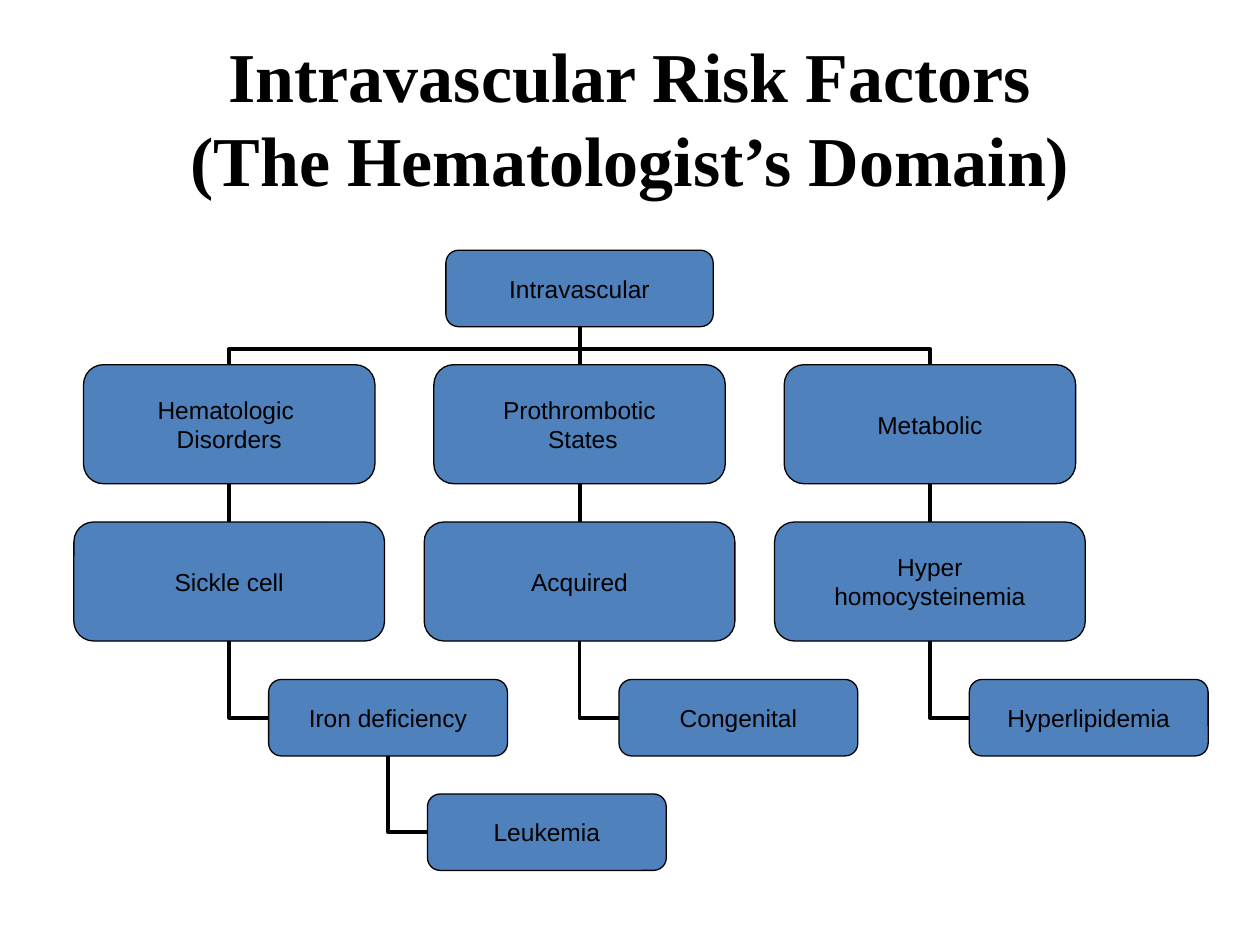
from lxml import etree
from pptx import Presentation
from pptx import util as u
from pptx.dml.color import RGBColor
from pptx.enum import shapes, text
from pptx.oxml.ns import qn

CENTERS = [131, 331.2, 531.4]
GROUPS = [
    ("Hematologic \nDisorders", "Sickle cell", ["Iron deficiency", "Leukemia"]),
    ("Prothrombotic\n States", "Acquired", ["Congenital"]),
    ("Metabolic", "Hyper\nhomocysteinemia", ["Hyperlipidemia"]),
]
ROOT_TOP, GROUP_TOP, FIRST_TOP, LEAF_TOP = 143, 208.4, 298.3, 388.3
SMALL, LARGE = 43.7, 68
ROOT_WIDTH, GROUP_WIDTH, FIRST_WIDTH, LEAF_WIDTH = 152.8, 166.5, 177.5, 136.5
LEAF_INDENT, LEAF_STEP = 22.5, 65.4
BUS_Y = 199.4


def color(value):
    """Return the colour for a hex string."""
    return RGBColor.from_string(value)


def write_text(frame, content, size=14, font="Arial", bold=False, wrap=False):
    """Fill a text frame with centred paragraphs, one for each line."""
    frame.word_wrap = wrap
    frame.vertical_anchor = text.MSO_ANCHOR.MIDDLE
    for index, line in enumerate(content.split("\n")):
        paragraph = frame.add_paragraph() if index else frame.paragraphs[0]
        paragraph.text = line
        paragraph.alignment = text.PP_ALIGN.CENTER
        for run in paragraph.runs:
            run.font.size = u.Pt(size)
            run.font.name = font
            run.font.bold = bold
            run.font.color.rgb = color("000000")


def add_title(slide, content):
    """Add the slide title."""
    box = slide.shapes.add_textbox(u.Pt(36), u.Pt(21.6), u.Pt(648), u.Pt(90))
    write_text(box.text_frame, content, size=40, font="Times New Roman", bold=True, wrap=True)


def add_box(slide, content, center, top, width, height):
    """Add a rounded box centred on a horizontal position."""
    shape = slide.shapes.add_shape(
        shapes.MSO_SHAPE.ROUNDED_RECTANGLE,
        u.Pt(center - width / 2), u.Pt(top), u.Pt(width), u.Pt(height))
    shape.shadow.inherit = False
    shape.fill.solid()
    shape.fill.fore_color.rgb = color("4F81BD")
    shape.line.color.rgb = color("000000")
    shape.line.width = u.Pt(0.75)
    frame = shape.text_frame
    frame.margin_left = frame.margin_right = u.Pt(5.8)
    frame.margin_top = frame.margin_bottom = u.Pt(2.9)
    write_text(frame, content)


def add_link(slide, start, end):
    """Join two points, going across first and then up or down."""
    straight = start[0] == end[0]
    kind = shapes.MSO_CONNECTOR.STRAIGHT if straight else shapes.MSO_CONNECTOR.ELBOW
    connector = slide.shapes.add_connector(kind, *(u.Pt(value) for value in (*start, *end)))
    connector.line.color.rgb = color("000000")
    connector.line.width = u.Pt(2.25)
    properties = connector._element.spPr
    if not straight:
        properties.find(qn("a:prstGeom")).set("prst", "bentConnector2")
    etree.SubElement(properties, qn("a:effectLst"))


def add_leaves(slide, leaves, center):
    """Add a descending staircase of small boxes, each linked to the one above."""
    parent_bottom = FIRST_TOP + LARGE
    for index, leaf in enumerate(leaves):
        top = LEAF_TOP + index * LEAF_STEP
        left = center + LEAF_INDENT
        add_link(slide, (left, top + SMALL / 2), (center, parent_bottom))
        center = left + LEAF_WIDTH / 2
        add_box(slide, leaf, center, top, LEAF_WIDTH, SMALL)
        parent_bottom = top + SMALL


def add_group(slide, center, heading, first, leaves):
    """Add one column of the chart with its links."""
    root = CENTERS[1]
    if center == root:
        add_link(slide, (root, ROOT_TOP + SMALL), (root, GROUP_TOP))
    else:
        add_link(slide, (root, BUS_Y), (center, GROUP_TOP))
    add_link(slide, (center, GROUP_TOP + LARGE), (center, FIRST_TOP))
    add_box(slide, heading, center, GROUP_TOP, GROUP_WIDTH, LARGE)
    add_box(slide, first, center, FIRST_TOP, FIRST_WIDTH, LARGE)
    add_leaves(slide, leaves, center)


def main():
    """Build the slide and save it."""
    presentation = Presentation()
    presentation.slide_width, presentation.slide_height = u.Pt(720), u.Pt(540)
    slide = presentation.slides.add_slide(presentation.slide_layouts[6])
    add_title(slide, "Intravascular Risk Factors\v(The Hematologist’s Domain)")
    for center, group in zip(CENTERS, GROUPS):
        add_group(slide, center, *group)
    add_box(slide, "Intravascular", CENTERS[1], ROOT_TOP, ROOT_WIDTH, SMALL)
    presentation.save("out.pptx")


if __name__ == "__main__":
    main()
